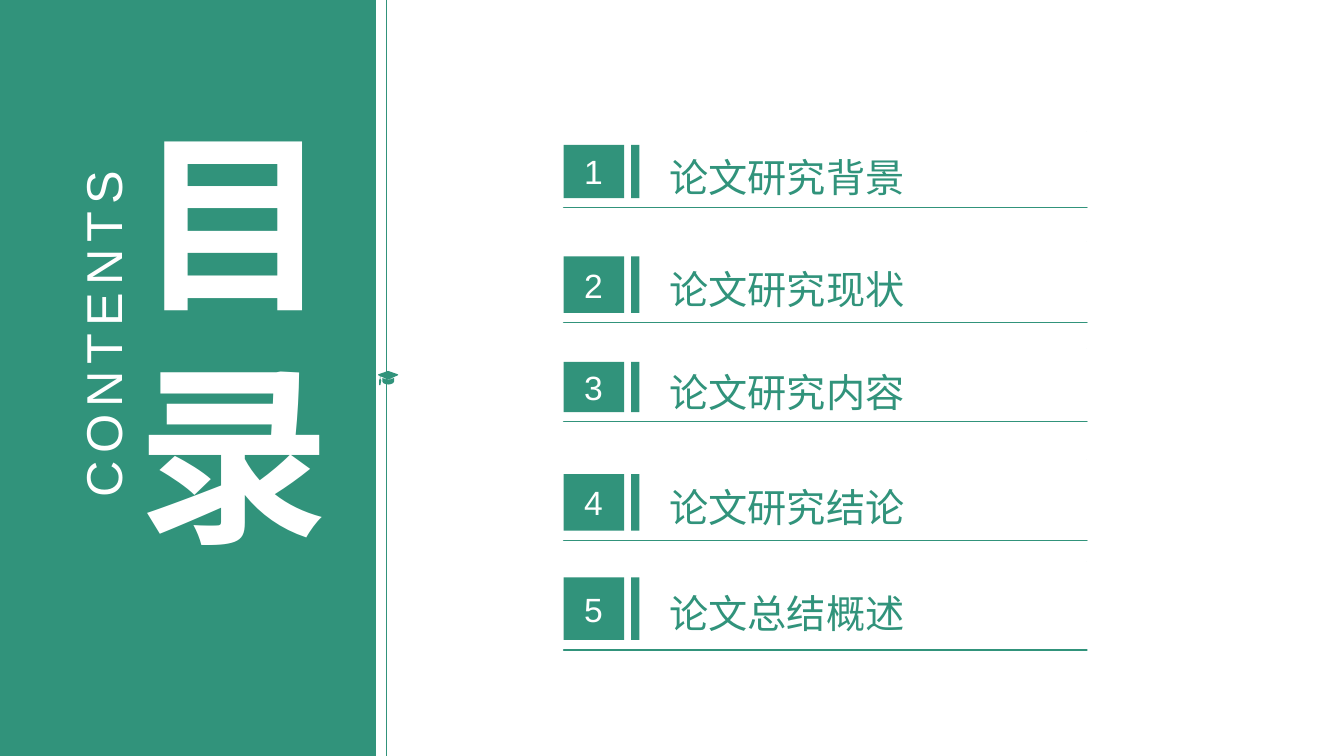
from lxml import etree
from pptx import Presentation
from pptx.dml.color import RGBColor
from pptx.enum import shapes, text
from pptx.oxml import ns
from pptx.util import Pt

PX = 9144  # EMU, 100 px to the inch
WIDE, HIGH = 1333, 750
GREEN, WHITE = "31937B", "FFFFFF"
LATIN, HAN = "Arial", "Noto Sans CJK SC"
# label, top, height
ROWS = [
    ("论文研究背景", 130, 76),
    ("论文研究现状", 240, 80),
    ("论文研究内容", 346, 72),
    ("论文研究结论", 456, 80),
    ("论文总结概述", 557, 88),
]
# Outlines of the cap in tenths of a px
CAP = [
    [(0, 35), (100, 0), (200, 35), (200, 42), (100, 88), (24, 52),
     (24, 80), (32, 92), (24, 140), (12, 140), (10, 92), (17, 80),
     (17, 50), (0, 42)],
    [(42, 70), (100, 92), (160, 70), (160, 105), (148, 122),
     (124, 132), (101, 135), (78, 132), (54, 122), (42, 105)],
]


def tint(code):
    return RGBColor.from_string(code)


def px(*sizes):
    return [round(size * PX) for size in sizes]


def paint(shape):
    shape.shadow.inherit = False
    shape.fill.solid()
    shape.fill.fore_color.rgb = tint(GREEN)
    shape.line.fill.background()


def trace(slide, x, y, parts, scale=PX):
    """Draw closed outlines as one shape, with its origin at x, y."""
    pen = slide.shapes.build_freeform(*parts[0][0], scale=scale)
    for i, part in enumerate(parts):
        if i:
            pen.move_to(*part[0])
        pen.add_line_segments(part[1:])
    shape = pen.convert_to_shape(*px(x, y))
    paint(shape)
    return shape


def oblong(x, w, h):
    return [(x, 0), (x + w, 0), (x + w, h), (x, h)]


def rule(slide, x1, y1, x2, y2):
    line = slide.shapes.add_connector(
        shapes.MSO_CONNECTOR.STRAIGHT, *px(x1, y1, x2, y2))
    line.line.color.rgb = tint(GREEN)
    line.line.width = Pt(0.5)
    etree.SubElement(line._element.spPr, ns.qn("a:effectLst"))


def write(shape, words, size, face, color, align, wrap=True,
          inset=(0, 0, 0, 0)):
    """Set the words, centred in height, and return the run.

    Insets go left, top, right, bottom.
    """
    frame = shape.text_frame
    frame.text = words
    frame.word_wrap = wrap
    frame.auto_size = text.MSO_AUTO_SIZE.NONE
    frame.vertical_anchor = text.MSO_ANCHOR.MIDDLE
    (frame.margin_left, frame.margin_top,
     frame.margin_right, frame.margin_bottom) = px(*inset)
    para = frame.paragraphs[0]
    para.alignment = align
    run = para.runs[0]
    run.font.size = Pt(size)
    run.font.name = face
    run.font.color.rgb = tint(color)
    etree.SubElement(run._r.rPr, ns.qn("a:ea"), typeface=face)
    return run


def panel(slide, x, y, w, h):
    paint(slide.shapes.add_shape(
        shapes.MSO_SHAPE.RECTANGLE, *px(x, y, w, h)))
    title = slide.shapes.title
    title.left, title.top, title.width, title.height = px(
        x + 126, y + 103, 207, 458)
    run = write(title, "目录", 138, HAN, WHITE, text.PP_ALIGN.LEFT,
                inset=(10, 5, 10, 5))
    run.font.bold = True
    slide.shapes._spTree.append(title._element)  # in front of the block

    side = slide.shapes.add_textbox(*px(x - 93, y + 276, 328, 111))
    side.rotation = 270
    run = write(side, "CONTENTS", 36, LATIN, WHITE, text.PP_ALIGN.CENTER,
                wrap=False, inset=(10, 60, 10, 0))
    run._r.rPr.set("spc", "500")


def spine(slide, x, y, h):
    """Draw the upright line with the cap at its middle."""
    mid = y + h / 2
    rule(slide, x, y, x, mid)
    rule(slide, x, mid, x, y + h)
    trace(slide, x - 8, mid - 7, CAP, PX / 10)


def entry(slide, number, label, x, y, w, h):
    tall = round(0.7 * h)
    badge = trace(slide, x, y + 0.18 * h,
                  [oblong(67, 8, tall), oblong(0, 60, tall)])
    write(badge, str(number), 24, LATIN, WHITE, text.PP_ALIGN.CENTER,
          inset=(0, 0, 16, 0))
    base = [(w, h), (0, h), (w, h)]
    corner = [(w, 0), (w, 0)]
    row = trace(slide, x, y, [base, corner])
    row.line.color.rgb = tint(GREEN)
    row.line.width = Pt(1)
    write(row, label, 28, HAN, GREEN, text.PP_ALIGN.LEFT,
          inset=(105, 0, 0, 0))
    row.text_frame.paragraphs[0].line_spacing = 1.3


def main():
    deck = Presentation()
    deck.slide_width, deck.slide_height = px(WIDE, HIGH)
    slide = deck.slides.add_slide(deck.slide_layouts[5])
    panel(slide, 0, 0, 373, HIGH)
    spine(slide, 383, 0, HIGH)
    for number, (label, top, high) in enumerate(ROWS, 1):
        entry(slide, number, label, 559, top, 519, high)
    deck.save("out.pptx")


if __name__ == "__main__":
    main()
